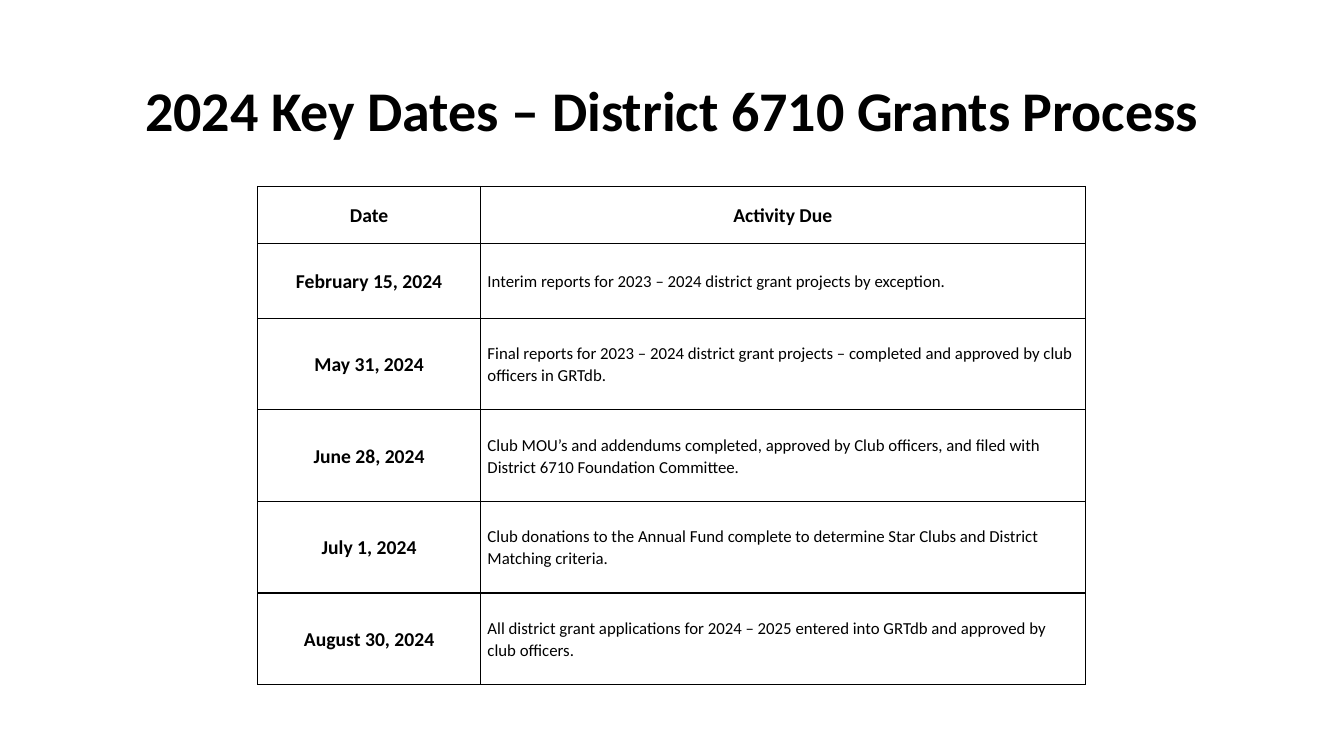
from dataclasses import dataclass

from lxml import etree
from pptx import Presentation
from pptx.dml.color import RGBColor
from pptx.enum.text import MSO_ANCHOR, PP_ALIGN
from pptx.oxml.ns import qn
from pptx.util import Inches, Pt

CENTER = PP_ALIGN.CENTER
LEFT = PP_ALIGN.LEFT
MIDDLE = MSO_ANCHOR.MIDDLE
BLANK_LAYOUT = 6
CELL_EDGES = ("lnL", "lnR", "lnT", "lnB")

TITLE = "2024 Key Dates – District 6710 Grants Process"
HEADINGS = ("Date", "Activity Due")
KEY_DATES = [
    ("February 15, 2024",
     "Interim reports for 2023 – 2024 district grant projects by exception."),
    ("May 31, 2024",
     "Final reports for 2023 – 2024 district grant projects – completed and "
     "approved by club officers in GRTdb."),
    ("June 28, 2024",
     "Club MOU’s and addendums completed, approved by Club officers, and filed "
     "with District 6710 Foundation Committee."),
    ("July 1, 2024",
     "Club donations to the Annual Fund complete to determine Star Clubs and "
     "District Matching criteria."),
    ("August 30, 2024",
     "All district grant applications for 2024 – 2025 entered into GRTdb and "
     "approved by club officers."),
]


@dataclass(frozen=True)
class Theme:
    font: str = "Calibri"
    ink: str = "000000"
    paper: str = "FFFFFF"
    title_size: int = 40
    label_size: int = 14
    body_size: int = 12
    border_width: float = 1
    title_spacing: float = 0.9
    cell_spacing: float = 1.07
    cell_margin: float = 0.07


class SlideBuilder:
    COLUMNS = 160
    ROWS = 90

    def __init__(self, deck, theme):
        self.theme = theme
        self.column = deck.slide_width / self.COLUMNS
        self.row = deck.slide_height / self.ROWS
        self.page = deck.slides.add_slide(deck.slide_layouts[BLANK_LAYOUT])
        fill = self.page.background.fill
        fill.solid()
        fill.fore_color.rgb = RGBColor.from_string(theme.paper)

    def across(self, columns):
        return round(columns * self.column)

    def down(self, rows):
        return round(rows * self.row)

    def set_text(self, frame, text, size, bold, align, spacing):
        frame.text = text
        frame.word_wrap = True
        para = frame.paragraphs[0]
        para.alignment = align
        para.line_spacing = spacing
        font = para.runs[0].font
        font.name = self.theme.font
        font.size = Pt(size)
        font.bold = bold
        font.color.rgb = RGBColor.from_string(self.theme.ink)

    def title(self, text, left, top, width, height):
        box = self.page.shapes.add_textbox(
            self.across(left), self.down(top), self.across(width), self.down(height))
        box.text_frame.vertical_anchor = MIDDLE
        self.set_text(box.text_frame, text, self.theme.title_size, True, CENTER,
                      self.theme.title_spacing)

    def outline(self, cell):
        properties = cell._tc.get_or_add_tcPr()
        for edge in CELL_EDGES:
            line = etree.SubElement(properties, qn(f"a:{edge}"),
                                    w=str(Pt(self.theme.border_width)))
            solid = etree.SubElement(line, qn("a:solidFill"))
            etree.SubElement(solid, qn("a:srgbClr"), val=self.theme.ink)

    def cell(self, cell, text, is_label):
        theme = self.theme
        self.outline(cell)
        cell.fill.background()
        cell.vertical_anchor = MIDDLE
        cell.margin_left = cell.margin_right = Inches(theme.cell_margin)
        cell.margin_top = cell.margin_bottom = 0
        size = theme.label_size if is_label else theme.body_size
        align = CENTER if is_label else LEFT
        self.set_text(cell.text_frame, text, size, is_label, align, theme.cell_spacing)

    def table(self, records, left, top, widths, heights):
        frame = self.page.shapes.add_table(
            len(heights), len(widths), self.across(left), self.down(top),
            self.across(sum(widths)), self.down(sum(heights)))
        table = frame.table
        table.first_row = False
        table.horz_banding = False
        for column, width in zip(table.columns, widths):
            column.width = self.across(width)
        for row, height in zip(table.rows, heights):
            row.height = self.down(height)
        for row_index, record in enumerate(records):
            for column_index, text in enumerate(record):
                is_label = row_index == 0 or column_index == 0
                self.cell(table.cell(row_index, column_index), text, is_label)


def main():
    deck = Presentation()
    deck.slide_width = Inches(13.33)
    deck.slide_height = Inches(7.5)
    builder = SlideBuilder(deck, Theme())
    builder.title(TITLE, left=11, top=4.8, width=138, height=17.4)
    builder.table([HEADINGS, *KEY_DATES], left=30.7, top=22.2,
                  widths=[26.5, 72], heights=[6.8, 8.9] + [10.9] * 4)
    deck.save("out.pptx")


if __name__ == "__main__":
    main()
